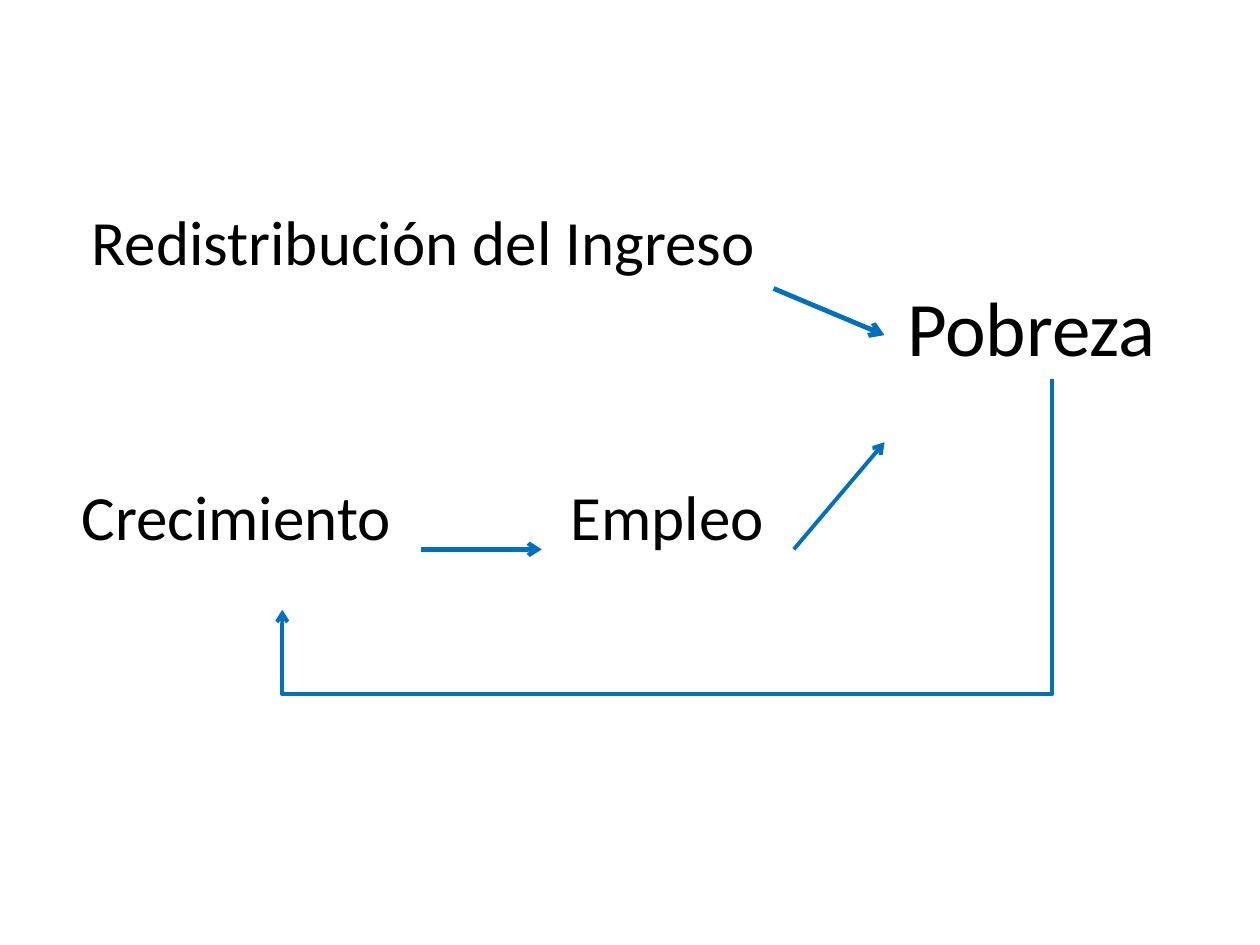
from typing import NamedTuple

from lxml import etree
from pptx import Presentation
from pptx.dml.color import RGBColor
from pptx.enum import shapes, text
from pptx.oxml import ns
from pptx.util import Inches, Pt

BLACK = RGBColor(0x00, 0x00, 0x00)
BLUE = RGBColor(0x00, 0x70, 0xC0)
FONT = "Calibri"
KIND = shapes.MSO_CONNECTOR


class Label(NamedTuple):
    words: str
    left: float
    top: float
    width: float
    height: float = 1.1
    size: float = 36


class Arrow(NamedTuple):
    start: tuple[float, float]
    end: tuple[float, float]
    weight: float = 2.25


LABELS = [
    Label("Redistribución del Ingreso", 0.63, 1.56, 6.31),
    Label("Pobreza", 7.1, 2.17, 2.51, 0.84, 44),
    Label("Crecimiento", 0.55, 3.74, 3.39),
    Label("Empleo", 4.43, 3.74, 2.03),
]
ARROWS = [
    Arrow((6.14, 2.29), (7.02, 2.66), 2.75),
    Arrow((6.3, 4.36), (7.02, 3.51)),
    Arrow((3.34, 4.36), (4.3, 4.36), 2.5),
]
# Feedback from poverty to growth, dipping below both ends
LOOP = Arrow((8.35, 3.01), (2.24, 4.84))
DIP = 5.51


def add_text(slide, words: str, *, left: float, top: float, width: float,
             height: float, size: float, color: RGBColor = BLACK) -> None:
    box = slide.shapes.add_textbox(
        Inches(left), Inches(top), Inches(width), Inches(height))
    frame = box.text_frame
    frame.word_wrap = True
    frame.auto_size = text.MSO_AUTO_SIZE.NONE
    run = frame.paragraphs[0].add_run()
    run.text = words
    run.font.name = FONT
    run.font.size = Pt(size)
    run.font.color.rgb = color


def add_arrow(slide, arrow: Arrow, kind=KIND.STRAIGHT):
    ends = [Inches(n) for n in (*arrow.start, *arrow.end)]
    link = slide.shapes.add_connector(kind, *ends)
    link.line.color.rgb = BLUE
    link.line.width = Pt(arrow.weight)
    props = link._element.spPr
    etree.SubElement(props.find(ns.qn("a:ln")), ns.qn("a:tailEnd"), type="arrow")
    etree.SubElement(props, ns.qn("a:effectLst"))
    return link


def add_loop(slide, arrow: Arrow, dip: float) -> None:
    """Draw an elbow turned a quarter, so that it leaves downwards."""
    (x1, y1), (x2, y2) = arrow.start, arrow.end
    mid_x, mid_y = (x1 + x2) / 2, (y1 + y2) / 2
    half_w, half_h = (y2 - y1) / 2, (x1 - x2) / 2
    turned = Arrow((mid_x - half_w, mid_y - half_h),
                   (mid_x + half_w, mid_y + half_h), arrow.weight)
    link = add_arrow(slide, turned, KIND.ELBOW)
    props = link._element.spPr
    props.find(ns.qn("a:xfrm")).set("rot", str(90 * 60000))
    bend = round((dip - y1) / (y2 - y1) * 100000)
    guides = props.find(ns.qn("a:prstGeom")).find(ns.qn("a:avLst"))
    etree.SubElement(guides, ns.qn("a:gd"), name="adj1", fmla=f"val {bend}")


def main() -> None:
    deck = Presentation()
    deck.slide_width, deck.slide_height = Inches(10), Inches(7.5)
    slide = deck.slides.add_slide(deck.slide_layouts[6])

    # Concepts
    for label in LABELS:
        add_text(slide, label.words, left=label.left, top=label.top,
                 width=label.width, height=label.height, size=label.size)

    # Causal links
    for arrow in ARROWS:
        add_arrow(slide, arrow)
    add_loop(slide, LOOP, DIP)

    deck.save("out.pptx")


if __name__ == "__main__":
    main()
